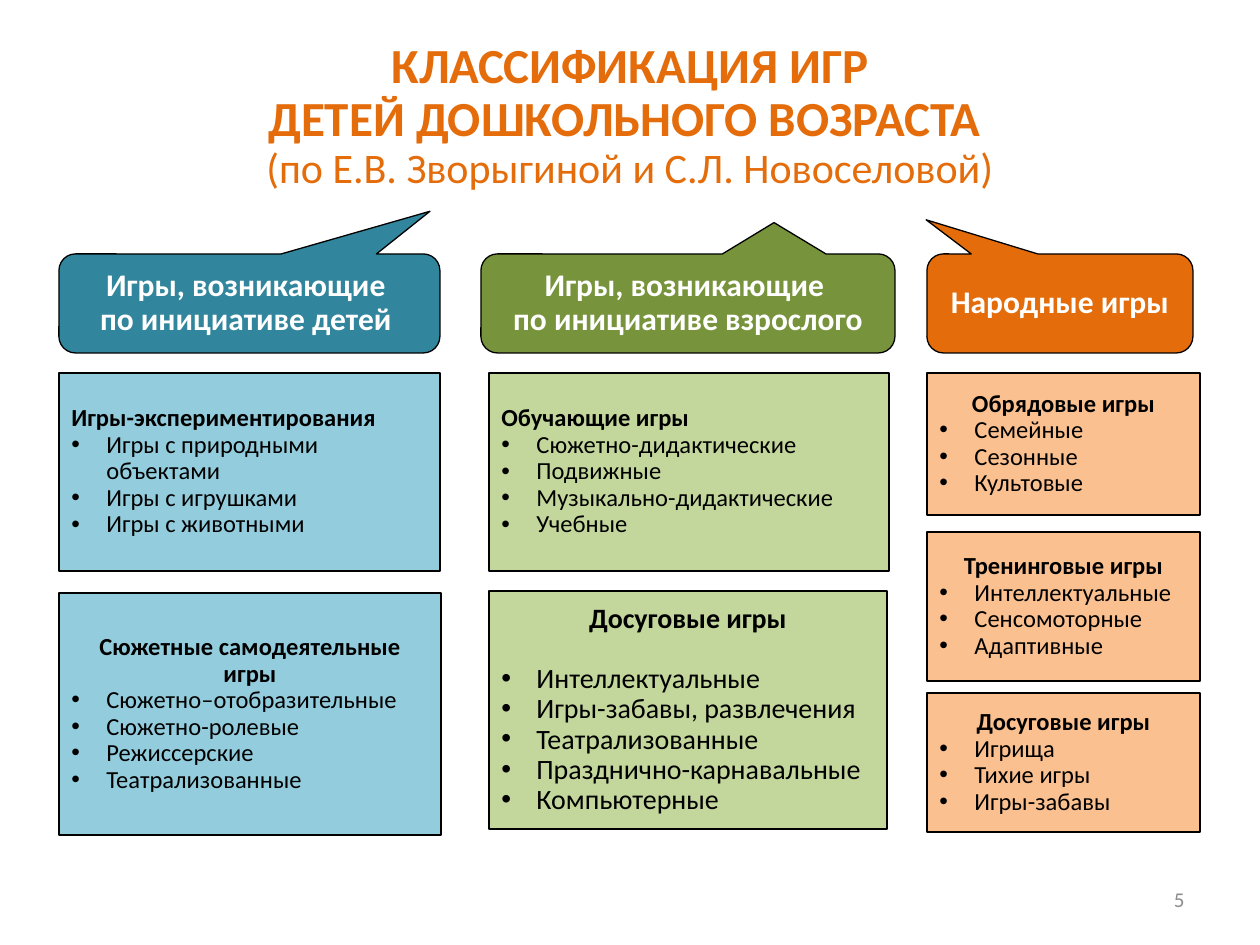
"""Builds a slide that classifies the games of preschool children."""
from lxml import etree
from pptx import Presentation
from pptx import util as u
from pptx.dml.color import RGBColor
from pptx.enum import shapes, text
from pptx.oxml import ns

SCALE = 914400 / 126
COLORS = {
    "orange": "E46C0A", "teal": "31859C", "green": "77933C",
    "light_orange": "FAC090", "light_teal": "93CDDD", "light_green": "C3D69B",
    "black": "000000", "white": "FFFFFF", "grey": "8C8C8C",
}
LEFT, CENTER, RIGHT = text.PP_ALIGN.LEFT, text.PP_ALIGN.CENTER, text.PP_ALIGN.RIGHT
CALLOUT_TOP, CALLOUT_HEIGHT = 254, 99

CALLOUTS = [
    (59, 381, "teal", (0.474, -0.931), ["Игры, возникающие ", "по инициативе детей "]),
    (481, 414, "green", (0.208, -0.817), ["Игры, возникающие ", "по инициативе взрослого"]),
    (927, 266, "orange", (-0.503, -0.845), ["Народные игры"]),
]
PANELS = [
    ((59, 373, 381, 198), "light_teal", 14, LEFT, 0, ["Игры-экспериментирования"],
     ["Игры с природными\nобъектами", "Игры с игрушками", "Игры с животными"]),
    ((59, 593, 382, 242), "light_teal", 14, CENTER, 0, ["Сюжетные самодеятельные", "игры"],
     ["Сюжетно–отобразительные", "Сюжетно-ролевые", "Режиссерские", "Театрализованные"]),
    ((489, 373, 400, 198), "light_green", 14, LEFT, 0, ["Обучающие игры"],
     ["Сюжетно-дидактические", "Подвижные", "Музыкально-дидактические", "Учебные"]),
    ((489, 591, 398, 238), "light_green", 16, CENTER, 17, ["Досуговые игры"],
     ["Интеллектуальные", "Игры-забавы, развлечения", "Театрализованные",
      "Празднично-карнавальные", "Компьютерные"]),
    ((927, 373, 273, 142), "light_orange", 14, CENTER, 0, ["Обрядовые игры"],
     ["Семейные", "Сезонные", "Культовые"]),
    ((927, 532, 273, 149), "light_orange", 14, CENTER, 0, ["Тренинговые игры"],
     ["Интеллектуальные", "Сенсомоторные", "Адаптивные"]),
    ((927, 693, 273, 139), "light_orange", 14, CENTER, 0, ["Досуговые игры"],
     ["Игрища", "Тихие игры", "Игры-забавы"]),
]


def px(length):
    """Turn pixels into EMU."""
    return u.Emu(round(length * SCALE))


def rgb(name):
    """Look up a named colour."""
    return RGBColor.from_string(COLORS[name])


class Painter:
    """Holds the style and the current slide."""

    font = "Calibri"
    line_width = u.Pt(0.75)
    line_spacing = 0.9
    bullet_indent = 35

    def __init__(self, slide):
        """Start on the given slide."""
        self.slide = slide

    def frame(self, box):
        """Prepare the text frame of a box."""
        frame = box.text_frame
        frame.word_wrap = True
        frame.vertical_anchor = text.MSO_ANCHOR.MIDDLE
        return frame

    def para(self, frame, align=LEFT):
        """Return the next paragraph, using the empty first one if free."""
        para = frame.paragraphs[0]
        if para.runs:
            para = frame.add_paragraph()
        para.alignment = align
        para.line_spacing = self.line_spacing
        return para

    def span(self, para, words, size, color, bold=False):
        """Add a styled run for each line of the words."""
        for number, line in enumerate(words.split("\n")):
            if number:
                para.add_line_break()
            if line:
                span = para.add_run()
                span.text = line
                span.font.name = self.font
                span.font.size = u.Pt(size)
                span.font.bold = bold
                span.font.color.rgb = rgb(color)

    def bullet(self, para):
        """Give a paragraph a hanging bullet."""
        props = para._p.get_or_add_pPr()
        indent = px(self.bullet_indent)
        props.set("marL", str(indent))
        props.set("indent", str(-indent))
        etree.SubElement(props, ns.qn("a:buFont"), typeface="Arial")
        etree.SubElement(props, ns.qn("a:buChar"), char="•")

    def label(self, area, align, spans):
        """Add a text box with one paragraph of spans."""
        box = self.slide.shapes.add_textbox(*map(px, area))
        para = self.para(self.frame(box), align)
        for span in spans:
            self.span(para, *span)

    def shape(self, kind, area, fill):
        """Add a filled and outlined shape."""
        box = self.slide.shapes.add_shape(kind, *map(px, area))
        box.shadow.inherit = False
        box.fill.solid()
        box.fill.fore_color.rgb = rgb(fill)
        box.line.color.rgb = rgb("black")
        box.line.width = self.line_width
        return box

    def callout(self, left, width, fill, tip, lines):
        """Add a rounded callout that heads a column."""
        area = (left, CALLOUT_TOP, width, CALLOUT_HEIGHT)
        box = self.shape(shapes.MSO_SHAPE.ROUNDED_RECTANGULAR_CALLOUT, area, fill)
        box.adjustments[0], box.adjustments[1] = tip
        frame = self.frame(box)
        for line in lines:
            self.span(self.para(frame, CENTER), line, 18, "white", True)

    def panel(self, area, fill, size, align, gap, heading, items):
        """Add a panel with a bold heading and a bulleted list."""
        frame = self.frame(self.shape(shapes.MSO_SHAPE.RECTANGLE, area, fill))
        for line in heading:
            para = self.para(frame, align)
            self.span(para, line, size, "black", True)
        para.space_after = u.Pt(gap)
        for item in items:
            para = self.para(frame)
            self.bullet(para)
            self.span(para, item, size, "black")


def main():
    """Build and save the deck."""
    deck = Presentation()
    deck.slide_width, deck.slide_height = px(1260), px(945)
    page = Painter(deck.slides.add_slide(deck.slide_layouts[6]))
    page.label((63, 38, 1134, 157), CENTER, [
        ("КЛАССИФИКАЦИЯ ИГР\nДЕТЕЙ ДОШКОЛЬНОГО ВОЗРАСТА \n", 28, "orange", True),
        ("(по Е.В. Зворыгиной и С.Л. Новоселовой)", 24, "orange"),
    ])
    for callout in CALLOUTS:
        page.callout(*callout)
    for panel in PANELS:
        page.panel(*panel)
    page.label((903, 876, 294, 50), RIGHT, [("5", 12, "grey")])
    deck.save("out.pptx")


if __name__ == "__main__":
    main()
